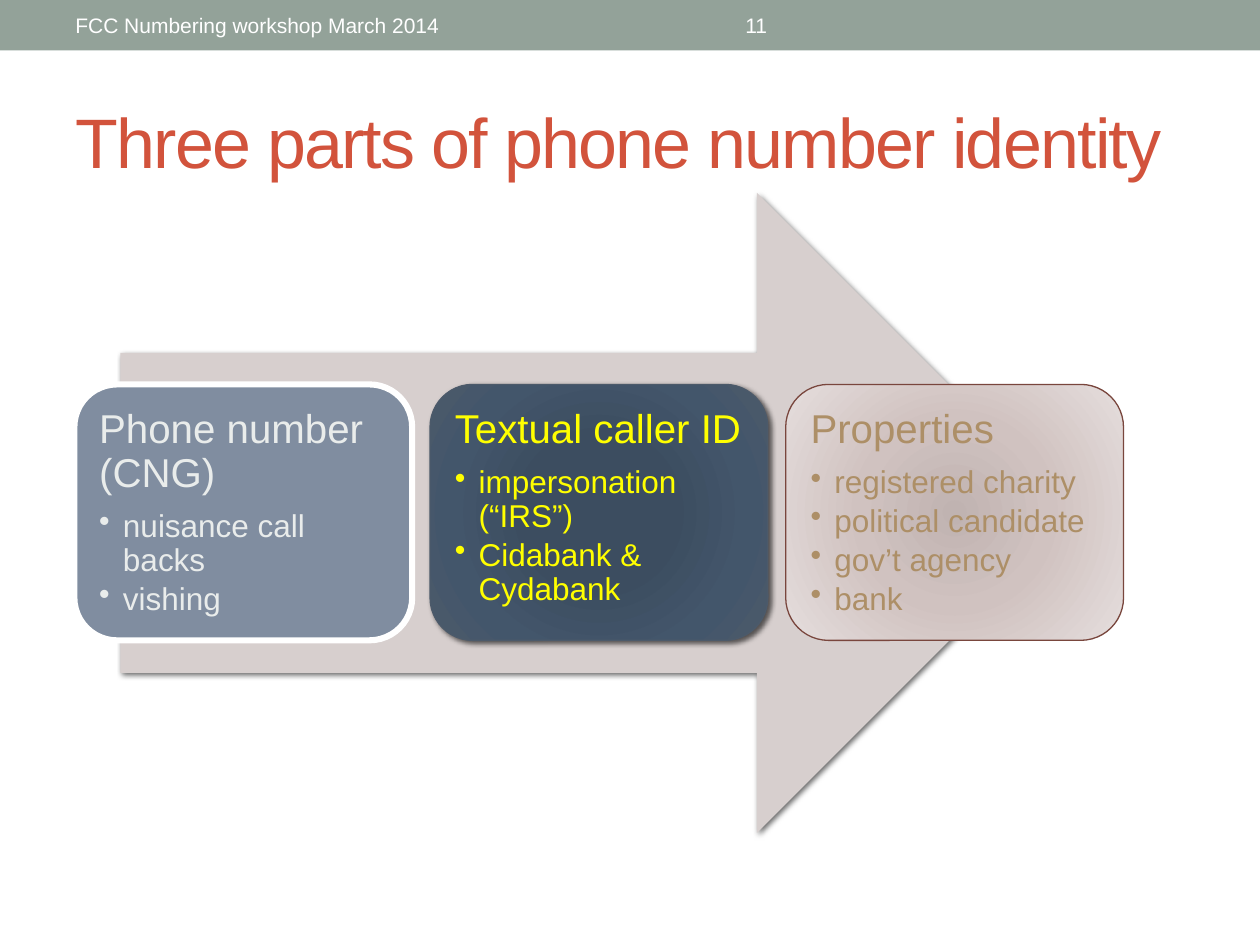
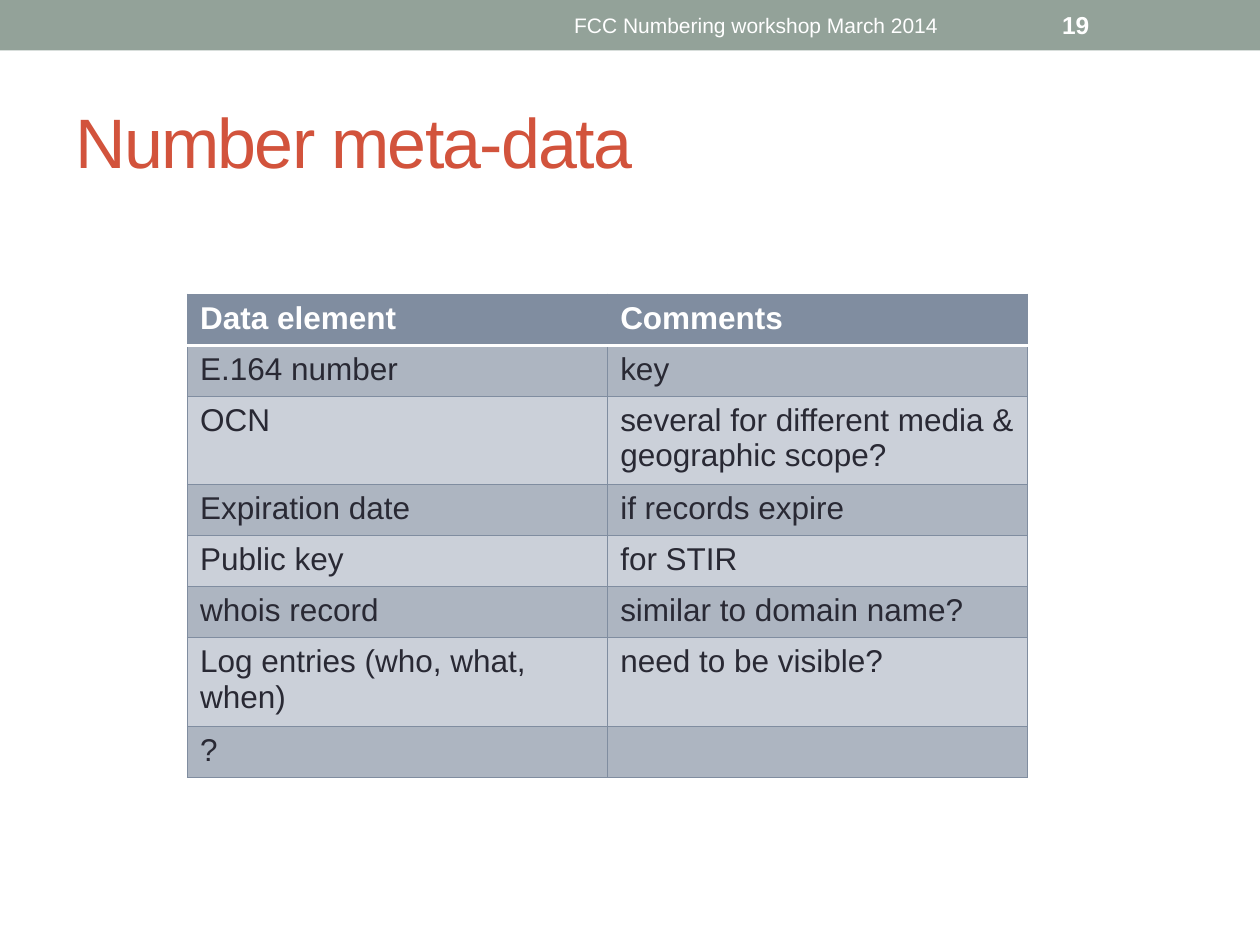
from lxml import etree
from pptx import Presentation
from pptx import util as u
from pptx.dml.color import RGBColor
from pptx.enum import shapes, text
from pptx.oxml import parse_xml
from pptx.oxml.ns import nsdecls, qn

FONT = "Arial"
BAND, TITLE, WHITE, SLATE = "93A299", "D2533C", "FFFFFF", "808DA0"
INK, ARROW = "292934", "D7CFCE"
ROW_FILLS = ("CBD0D9", "ADB5C1")
EVENT = "FCC Numbering workshop March 2014"

# Each card: line colour and width, fill or gradient stops, shadow, text colour, heading, bullets
CARDS = [
    (WHITE, 3.5, SLATE, False, "E9ECEB", "Phone number (CNG)",
     ["nuisance call backs", "vishing"]),
    ("4C5A6A", 0.75, [(0, "3B4D61"), (34, "3C4D60"), (70, "43566B"), (100, "4C5A6A")],
     True, "FFFF00", "Textual caller ID",
     ["impersonation (“IRS”)", "Cidabank & Cydabank"]),
    ("79463D", 0.75, [(0, "C0B3B1"), (45, "D0C2C0"), (100, "E5DEDD")],
     False, "AD8F67", "Properties",
     ["registered charity", "political candidate", "gov’t agency", "bank"]),
]

METADATA = [
    ("Data element", "Comments"),
    ("E.164 number", "key"),
    ("OCN", "several for different media & geographic scope?"),
    ("Expiration date", "if records expire"),
    ("Public key", "for STIR"),
    ("whois record", "similar to domain name?"),
    ("Log entries (who, what, when)", "need to be visible?"),
    ("?", ""),
]


def color(code):
    return RGBColor.from_string(code)


def lengths(*values):
    return [u.Cm(value) for value in values]


# Text
def write(para, words, size=18, ink=WHITE, bold=False, spacing=None, align=None):
    span = para.add_run()
    span.text = words
    span.font.name, span.font.size, span.font.bold = FONT, u.Pt(size), bold
    span.font.color.rgb = color(ink)
    if spacing is not None:
        span._r.get_or_add_rPr().set("spc", str(round(spacing * 100)))
    if align is not None:
        para.alignment = align


def add_text(page, place, words=None, anchor=text.MSO_ANCHOR.MIDDLE, **style):
    box = page.shapes.add_textbox(*lengths(*place))
    frame = box.text_frame
    frame.word_wrap = True
    frame.vertical_anchor = anchor
    if words:
        write(frame.paragraphs[0], words, **style)
    return frame


def set_bullet(para):
    properties = para._p.get_or_add_pPr()
    properties.set("marL", str(u.Cm(0.48)))
    properties.set("indent", str(-u.Cm(0.48)))
    etree.SubElement(properties, qn("a:buChar"), char="•")


# Shapes
def set_gradient(shape, stops):
    shape.fill.gradient()
    marks = "".join(f'<a:gs pos="{position * 1000}"><a:srgbClr val="{code}"/></a:gs>'
                    for position, code in stops)
    gradient = parse_xml(
        f'<a:gradFill {nsdecls("a")} rotWithShape="1"><a:gsLst>{marks}</a:gsLst>'
        '<a:path path="circle"><a:fillToRect l="100000" t="100000" r="100000" b="100000"/>'
        '</a:path></a:gradFill>')
    properties = shape._element.spPr
    properties.replace(properties.find(qn("a:gradFill")), gradient)


def set_shadow(shape):
    effects = shape._element.spPr.find(qn("a:effectLst"))
    effects.append(parse_xml(
        f'<a:outerShdw {nsdecls("a")} blurRad="{u.Pt(3)}" dist="{u.Pt(2)}" dir="2700000" '
        'algn="ctr" rotWithShape="0"><a:srgbClr val="000000"><a:alpha val="60000"/>'
        '</a:srgbClr></a:outerShdw>'))


def add_figure(page, kind, place, fill, line=None, width=0.75, shadow=False):
    shape = page.shapes.add_shape(kind, *lengths(*place))
    shape.shadow.inherit = False
    if isinstance(fill, str):
        shape.fill.solid()
        shape.fill.fore_color.rgb = color(fill)
    else:
        set_gradient(shape, fill)
    if line:
        shape.line.color.rgb = color(line)
        shape.line.width = u.Pt(width)
    else:
        shape.line.fill.background()
    if shadow:
        set_shadow(shape)
    return shape


def add_card(page, left, card):
    line, width, fill, shadow, ink, heading, bullets = card
    top, wide, high, inset = 7.75, 6.81, 5.16, 0.25
    add_figure(page, shapes.MSO_SHAPE.ROUNDED_RECTANGLE, (left, top, wide, high),
               fill, line, width, shadow)
    frame = add_text(page, (left + inset, top + inset, wide - 2 * inset, high - 2 * inset),
                     anchor=text.MSO_ANCHOR.TOP)
    frame.margin_left = frame.margin_right = frame.margin_top = frame.margin_bottom = u.Cm(0.25)
    for index, words in enumerate([heading] + bullets):
        para = frame.add_paragraph() if index else frame.paragraphs[0]
        para.line_spacing = 0.9
        para.space_after = u.Pt(2.7 if index else 8)
        if index:
            set_bullet(para)
        write(para, words, size=18 if index else 23, ink=ink)


# Table
def set_borders(cell, **sides):
    properties = cell._tc.get_or_add_tcPr()
    for side in "LRTB":
        code, width = sides.get(side, (SLATE, 0.75))
        properties.append(parse_xml(
            f'<a:ln{side} {nsdecls("a")} w="{u.Pt(width)}"><a:solidFill>'
            f'<a:srgbClr val="{code}"/></a:solidFill></a:ln{side}>'))


def header_borders(row, column):
    rule = (WHITE, 2.08)
    if row == 0:
        inner = "R" if column == 0 else "L"
        return {"B": rule, inner: (SLATE, 0.75)}
    return {"T": rule} if row == 1 else {}


def add_metadata_table(page, left, top, column_width, row_height):
    count = len(METADATA)
    table = page.shapes.add_table(
        count, 2, *lengths(left, top, 2 * column_width, count * row_height)).table
    table.horz_banding = False
    for column in table.columns:
        column.width = u.Cm(column_width)
    for row, entries in enumerate(METADATA):
        table.rows[row].height = u.Cm(row_height)
        header = row == 0
        for column, words in enumerate(entries):
            cell = table.cell(row, column)
            set_borders(cell, **header_borders(row, column))
            cell.fill.solid()
            cell.fill.fore_color.rgb = color(SLATE if header else ROW_FILLS[row % 2])
            if words:
                write(cell.text_frame.paragraphs[0], words,
                      ink=WHITE if header else INK, bold=header)


# Shared page frame
def add_page(deck, title):
    page = deck.slides.add_slide(deck.slide_layouts[6])
    add_figure(page, shapes.MSO_SHAPE.RECTANGLE, (0, 0, 25.4, 1.02), BAND)
    add_text(page, (1.27, 1.47, 22.86, 2.74), title, size=40, ink=TITLE, spacing=-1)
    return page


def add_header(page, left, width, words, **style):
    add_text(page, (left, 0.05, width, 0.91), words, **{"size": 12, **style})


def main():
    deck = Presentation()
    deck.slide_width, deck.slide_height = lengths(25.4, 19.05)
    center = text.PP_ALIGN.CENTER

    # Identity parts along an arrow
    page = add_page(deck, "Three parts of phone number identity")
    add_header(page, 1.27, 8.05, EVENT)
    add_header(page, 9.53, 11.43, "11", align=center)
    add_figure(page, shapes.MSO_SHAPE.RIGHT_ARROW, (2.43, 3.89, 19.28, 12.9), ARROW, shadow=True)
    for index, card in enumerate(CARDS):
        add_card(page, 1.5 + 7.17 * index, card)

    # Table of number meta-data
    page = add_page(deck, "Number meta-data")
    add_header(page, 9.53, 11.43, EVENT, align=center)
    add_header(page, 21.16, 2.97, "19", size=14, bold=True)
    add_metadata_table(page, 3.78, 5.93, 8.47, 1.03)

    deck.save("out.pptx")


if __name__ == "__main__":
    main()
